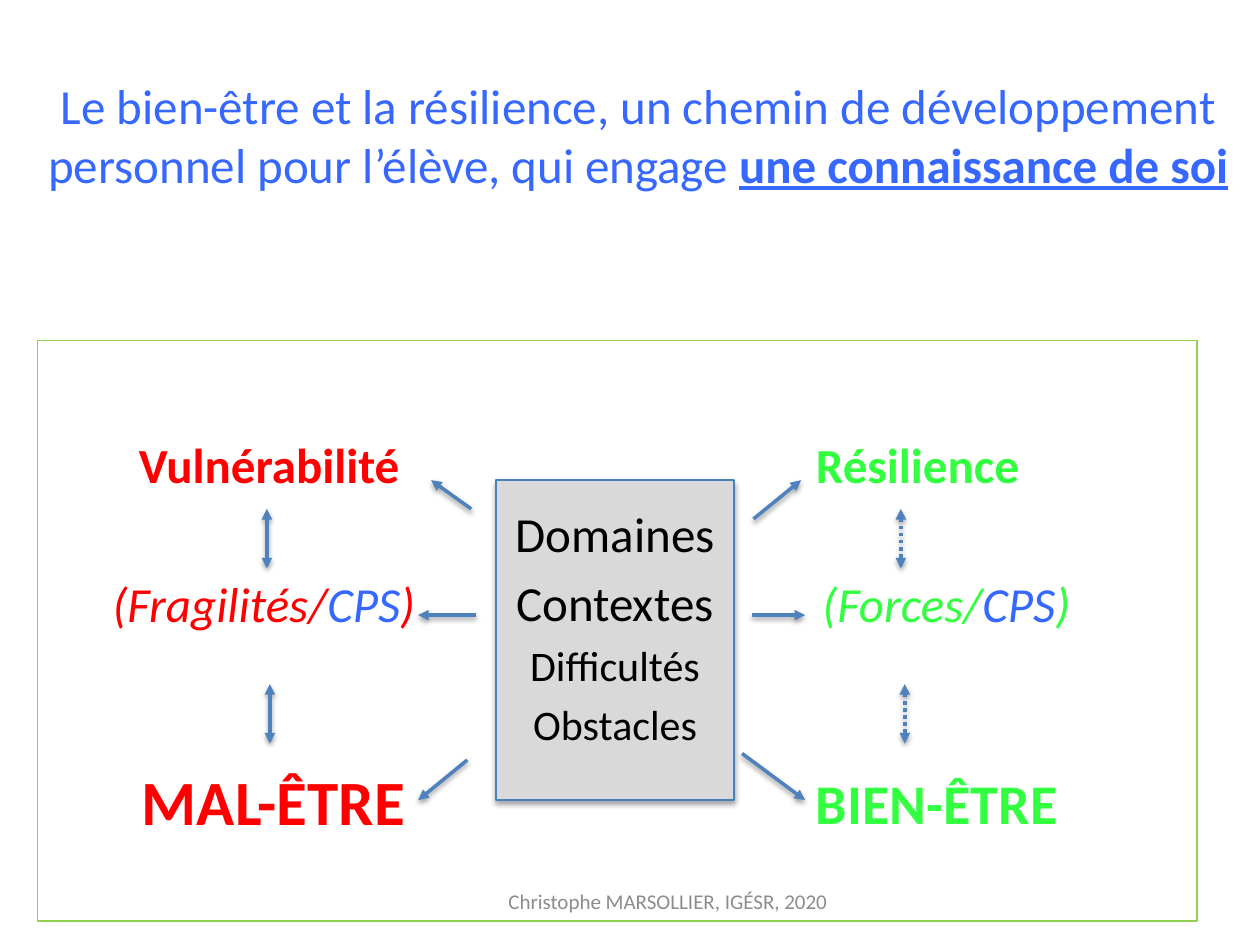
from lxml.etree import SubElement
from pptx import Presentation
from pptx.dml.color import RGBColor
from pptx.enum.dml import MSO_LINE
from pptx.enum.shapes import MSO_CONNECTOR, MSO_SHAPE
from pptx.enum.text import MSO_ANCHOR, PP_ALIGN
from pptx.oxml.ns import qn
from pptx.util import Cm, Pt

BLUE, RED, GREEN, BLACK, GREY = "3667FF", "FF0000", "31FF3F", "000000", "8C8C8C"
ARROW_BLUE = "4F81BD"
POINT_IN_CM = 2.54 / 72


def color(value):
    """Turn a hex string into a colour."""
    return RGBColor.from_string(value)


def add_run(paragraph, text, size, hex_color, bold=False, italic=False, underline=False):
    """Append one formatted run."""
    run = paragraph.add_run()
    run.text = text
    font = run.font
    font.name, font.size = "Calibri", Pt(size)
    font.bold, font.italic, font.underline = bold, italic, underline
    font.color.rgb = color(hex_color)


def add_text(slide, left, top, width, height, align=PP_ALIGN.CENTER):
    """Add a wrapping text box without insets and return its paragraph."""
    frame = slide.shapes.add_textbox(Cm(left), Cm(top), Cm(width), Cm(height)).text_frame
    frame.word_wrap = True
    frame.margin_left = frame.margin_right = frame.margin_top = frame.margin_bottom = 0
    frame.vertical_anchor = MSO_ANCHOR.TOP
    frame.paragraphs[0].alignment = align
    return frame.paragraphs[0]


def add_label(slide, left, baseline, size, parts, **style):
    """Place a one-line label by its baseline, from pairs of text and colour."""
    top = baseline - 0.95 * size * POINT_IN_CM
    height = 1.22 * size * POINT_IN_CM
    paragraph = add_text(slide, left, top, 6.8, height, PP_ALIGN.LEFT)
    for text, hex_color in parts:
        add_run(paragraph, text, size, hex_color, **style)


def add_shadow(effects, opacity):
    """Put a soft downward shadow into an effect list."""
    shadow = SubElement(effects, qn("a:outerShdw"), blurRad=str(Pt(3.1)),
                        dist=str(Pt(1.7)), dir="5400000", rotWithShape="0")
    black = SubElement(shadow, qn("a:srgbClr"), val=BLACK)
    SubElement(black, qn("a:alpha"), val=str(opacity * 1000))


def add_arrow(slide, start, end, double=False, dotted=False):
    """Draw an arrow between two points."""
    points = [Cm(value) for value in (*start, *end)]
    arrow = slide.shapes.add_connector(MSO_CONNECTOR.STRAIGHT, *points)
    arrow.line.color.rgb = color(ARROW_BLUE)
    arrow.line.width = Pt(2)
    if dotted:
        arrow.line.dash_style = MSO_LINE.ROUND_DOT
    line = arrow.line._get_or_add_ln()
    if double:
        SubElement(line, qn("a:headEnd"), type="triangle")
    SubElement(line, qn("a:tailEnd"), type="triangle")
    add_shadow(SubElement(arrow._element.spPr, qn("a:effectLst")), 38)


def add_rectangle(slide, left, top, width, height, line_color):
    """Add an unfilled rectangle with a thin outline."""
    shape = slide.shapes.add_shape(MSO_SHAPE.RECTANGLE, Cm(left), Cm(top), Cm(width), Cm(height))
    shape.shadow.inherit = False
    shape.fill.background()
    shape.line.color.rgb = color(line_color)
    shape.line.width = Pt(0.75)
    return shape


def add_context_box(slide):
    """Add the central box with its four lines."""
    shape = add_rectangle(slide, 10, 9.68, 4.8, 6.45, "4B7EBC")
    shape.fill.solid()
    shape.fill.fore_color.rgb = color("D9D9D9")
    add_shadow(shape._element.spPr.find(qn("a:effectLst")), 35)
    frame = shape.text_frame
    frame.word_wrap = True
    frame.vertical_anchor = MSO_ANCHOR.TOP
    frame.margin_top = Cm(0.47)
    lines = [("Domaines", 28), ("Contextes", 28), ("Difficultés", 24), ("Obstacles", 24)]
    for index, (text, size) in enumerate(lines):
        paragraph = frame.add_paragraph() if index else frame.paragraphs[0]
        paragraph.alignment = PP_ALIGN.CENTER
        paragraph.space_before = Pt(0.2 * size if index else 0)
        add_run(paragraph, text, size, BLACK)


def add_labels(slide):
    """Add the vulnerability labels on the left and the resilience ones on the right."""
    add_label(slide, 2.8, 9.7, 28, [("Vulnérabilité", RED)], bold=True)
    add_label(slide, 16.45, 9.7, 28, [("Résilience", GREEN)], bold=True)
    add_label(slide, 2.27, 12.5, 28,
              [("(Fragilités/", RED), ("CPS", BLUE), (")", RED)], italic=True)
    add_label(slide, 16.58, 12.5, 28,
              [("(Forces/", GREEN), ("CPS", BLUE), (")", GREEN)], italic=True)
    add_label(slide, 2.86, 16.57, 36, [("MAL-ÊTRE", RED)], bold=True)
    add_label(slide, 16.45, 16.57, 32, [("BIEN-ÊTRE", GREEN)], bold=True)


def add_arrows(slide):
    """Link the labels vertically and the central box to both sides."""
    for x, top, dotted in [(5.38, 10.26, False), (5.44, 13.79, False),
                           (18.16, 10.26, True), (18.24, 13.79, True)]:
        add_arrow(slide, (x, top), (x, top + 1.2), double=True, dotted=dotted)
    for start, end in [((9.5, 10.26), (8.69, 9.68)), ((9.6, 12.4), (8.43, 12.4)),
                       ((9.42, 15.32), (8.43, 16.13)), ((15.16, 12.4), (16.23, 12.4)),
                       ((15.19, 10.46), (16.15, 9.68)), ((14.96, 15.19), (16.23, 16.13))]:
        add_arrow(slide, start, end)


def main():
    """Build and save the slide."""
    presentation = Presentation()
    presentation.slide_width, presentation.slide_height = Cm(25.4), Cm(19.05)
    slide = presentation.slides.add_slide(presentation.slide_layouts[6])
    title = add_text(slide, 0.25, 1.52, 25.23, 2.41)
    add_run(title, "Le bien-être et la résilience, un chemin de développement "
                   "personnel pour l’élève, qui engage ", 28, BLUE)
    add_run(title, "une connaissance de soi", 28, BLUE, bold=True, underline=True)
    add_rectangle(slide, 0.76, 6.86, 23.37, 11.71, "92D050")
    add_context_box(slide)
    add_labels(slide)
    add_arrows(slide)
    footer = add_text(slide, 8.69, 17.91, 9.55, 0.52)
    add_run(footer, "Christophe MARSOLLIER, IGÉSR, 2020", 12, GREY)
    presentation.save("out.pptx")


if __name__ == "__main__":
    main()
